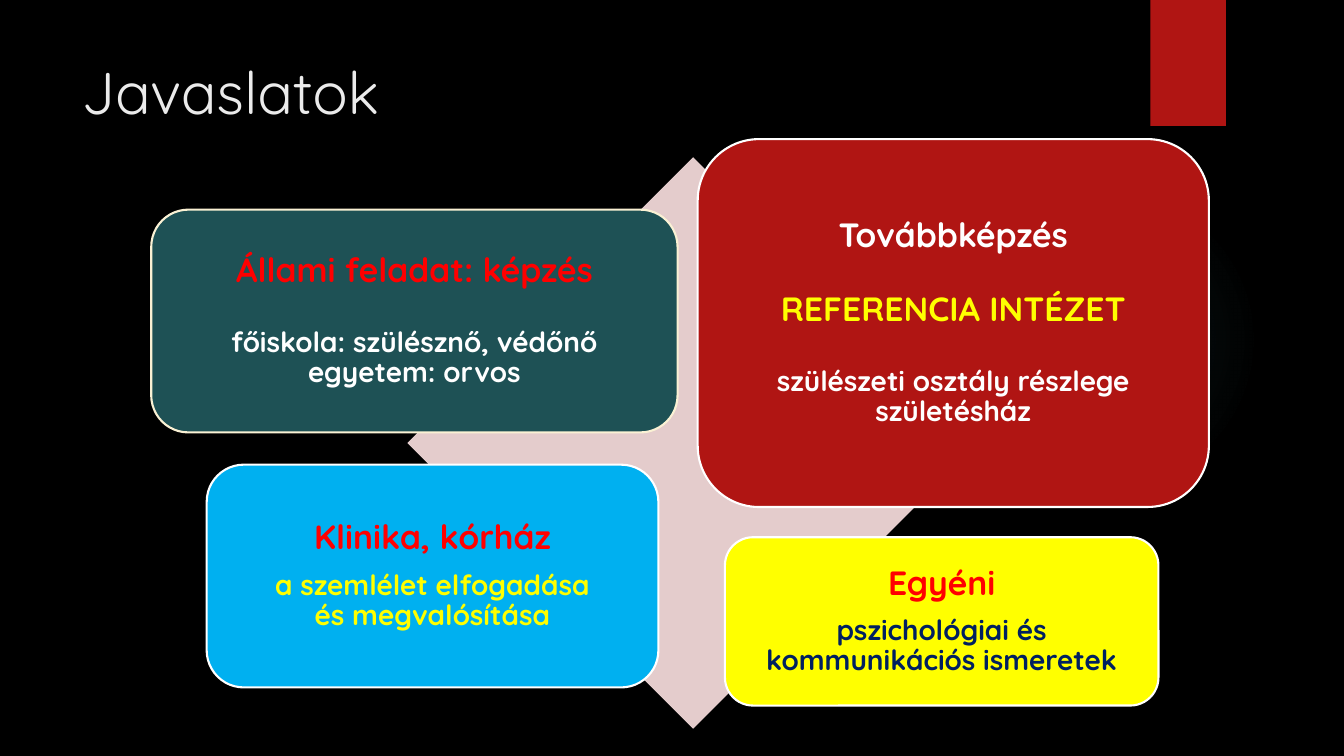
from pptx import Presentation
from pptx.dml.color import RGBColor
from pptx.enum.shapes import MSO_SHAPE as SHAPE
from pptx.enum.text import MSO_ANCHOR as ANCHOR, PP_ALIGN as ALIGN
from pptx.oxml import parse_xml
from pptx.oxml.ns import nsdecls
from pptx.util import Inches, Pt

BLACK = RGBColor(0x00, 0x00, 0x00)
WHITE = RGBColor(0xFF, 0xFF, 0xFF)
PALE = RGBColor(0xEB, 0xEB, 0xEB)
CREAM = RGBColor(0xFA, 0xF1, 0xD4)
ROSE = RGBColor(0xE4, 0xCC, 0xCC)
CRIMSON = RGBColor(0xB0, 0x15, 0x13)
RED = RGBColor(0xFF, 0x00, 0x00)
YELLOW = RGBColor(0xFF, 0xFF, 0x00)
TEAL = RGBColor(0x1E, 0x51, 0x55)
SKY = RGBColor(0x00, 0xB0, 0xF0)
NAVY = RGBColor(0x00, 0x20, 0x60)
GLOW = RGBColor(0x50, 0xB9, 0xC1)

FONT = "Quicksand"
SECTION_GAP = 27
HEADING_GAP = 10


def write(paragraph, text, size, color, bold=False, align=ALIGN.CENTER,
          spacing=0.9, after=0):
    paragraph.text = text
    paragraph.alignment = align
    paragraph.line_spacing = spacing
    paragraph.space_before = Pt(0)
    paragraph.space_after = Pt(after)
    for run in paragraph.runs:
        run.font.name = FONT
        run.font.size = Pt(size)
        run.font.bold = bold
        run.font.color.rgb = color


def add_block(slide, kind, box, fill, outline=None):
    block = slide.shapes.add_shape(kind, *map(Inches, box))
    block.shadow.inherit = False
    block.fill.solid()
    block.fill.fore_color.rgb = fill
    if outline is None:
        block.line.fill.background()
    else:
        block.line.color.rgb = outline
        block.line.width = Pt(1.5)
    return block


def add_backdrop(slide):
    slide.background.fill.solid()
    slide.background.fill.fore_color.rgb = BLACK
    glow = add_block(slide, SHAPE.OVAL, (9.41, 1.83, 3.08, 3.08), GLOW)
    stops = "".join(
        f'<a:gs pos="{position}000"><a:srgbClr val="{GLOW}">'
        f'<a:alpha val="{alpha}000"/></a:srgbClr></a:gs>'
        for position, alpha in ((0, 7), (36, 6), (69, 0)))
    gradient = parse_xml(
        f'<a:gradFill {nsdecls("a")}><a:gsLst>{stops}</a:gsLst>'
        '<a:path path="circle"><a:fillToRect l="50000" t="50000" '
        'r="50000" b="50000"/></a:path></a:gradFill>')
    properties = glow.element.spPr
    properties.replace(properties.find("{*}solidFill"), gradient)
    add_block(slide, SHAPE.RECTANGLE, (11.41, 0, 0.75, 1.25), CRIMSON)


def add_title(slide, box, text):
    title = slide.shapes.title
    title.left, title.top, title.width, title.height = map(Inches, box)
    title.text_frame.vertical_anchor = ANCHOR.TOP
    write(title.text_frame.paragraphs[0], text, 42, PALE,
          align=ALIGN.LEFT, spacing=1)


def add_card(slide, box, fill, outline, sections):
    card = add_block(slide, SHAPE.ROUNDED_RECTANGLE, box, fill, outline)
    frame = card.text_frame
    frame.word_wrap = True
    frame.vertical_anchor = ANCHOR.MIDDLE
    frame.margin_left = frame.margin_right = Inches(0.1)
    frame.margin_top = frame.margin_bottom = Inches(0.1)
    for index, (text, size, color, after) in enumerate(sections):
        paragraph = frame.add_paragraph() if index else frame.paragraphs[0]
        write(paragraph, text, size, color, bold=True, after=after)


def add_proposals(slide):
    add_block(slide, SHAPE.DIAMOND, (4.04, 1.56, 5.67, 5.67), ROSE)
    add_card(slide, (1.5, 2.08, 5.22, 2.21), TEAL, CREAM, [
        ("Állami feladat: képzés", 24, RED, SECTION_GAP),
        ("főiskola: szülésznő, védőnő\vegyetem: orvos", 20, WHITE, 0),
    ])
    add_card(slide, (6.92, 1.38, 5.07, 3.65), CRIMSON, WHITE, [
        ("Továbbképzés", 24, WHITE, SECTION_GAP),
        ("REFERENCIA INTÉZET", 24, YELLOW, SECTION_GAP),
        ("szülészeti osztály részlege\vszületésház", 20, WHITE, 0),
    ])
    add_card(slide, (2.05, 4.61, 4.48, 2.21), SKY, WHITE, [
        ("Klinika, kórház", 24, RED, HEADING_GAP),
        ("a szemlélet elfogadása\vés megvalósítása", 20, YELLOW, 0),
    ])
    add_card(slide, (7.19, 5.33, 4.3, 1.67), YELLOW, WHITE, [
        ("Egyéni", 24, RED, HEADING_GAP),
        ("pszichológiai és\vkommunikációs ismeretek", 20, NAVY, 0),
    ])


def main():
    deck = Presentation()
    deck.slide_width = Inches(13.33)
    deck.slide_height = Inches(7.5)
    slide = deck.slides.add_slide(deck.slide_layouts[5])
    add_backdrop(slide)
    add_title(slide, (0.71, 0.5, 10.29, 1.53), "Javaslatok")
    add_proposals(slide)
    deck.save("out.pptx")


if __name__ == "__main__":
    main()
